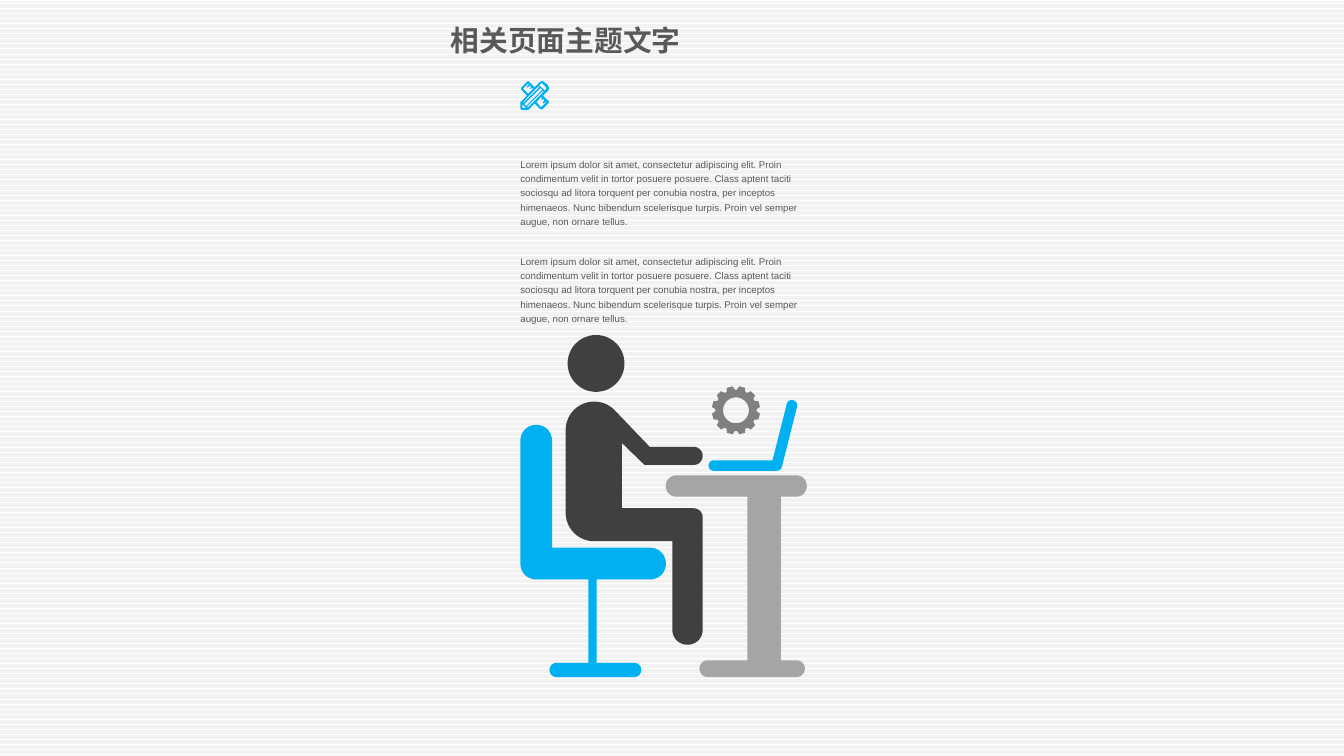
from math import acos, atan2, cos, hypot, pi, radians, remainder, sin, tan

from lxml.etree import SubElement
from pptx import Presentation
from pptx.dml.color import RGBColor
from pptx.enum.dml import MSO_PATTERN
from pptx.enum.shapes import MSO_SHAPE
from pptx.enum.text import MSO_ANCHOR, MSO_AUTO_SIZE, PP_ALIGN
from pptx.oxml.ns import qn
from pptx.util import Inches, Pt

WIDE, HIGH = 20.79, 11.69
BLUE, DARK, GREY, MID, INK = "00B0F0", "404040", "A5A5A5", "808080", "595959"
LOREM = (
    "Lorem ipsum dolor sit amet, consectetur adipiscing elit. Proin condimentum "
    "velit in tortor posuere posuere. Class aptent taciti sociosqu ad litora "
    "torquent per conubia nostra, per inceptos himenaeos. Nunc bibendum "
    "scelerisque turpis. Proin vel semper augue, non ornare tellus."
)

# Outlines are corners (x, y, radius) in inches from the top left of the scene.
CHAIR = [
    (0, 1.39, .24), (.49, 1.39, .24), (.49, 3.29, 0), (2.25, 3.29, .24),
    (2.25, 3.78, .24), (1.18, 3.78, 0), (1.18, 5.07, 0), (1.87, 5.07, .11),
    (1.87, 5.29, .11), (.45, 5.29, .11), (.45, 5.07, .11), (1.05, 5.07, 0),
    (1.05, 3.78, 0), (0, 3.78, .24),
]
BODY = [
    (.7, 1.03, .44), (1.33, 1.03, .44), (2, 1.73, 0), (2.82, 1.73, .14),
    (2.82, 2.01, .14), (1.92, 2.01, 0), (1.57, 1.67, 0), (1.57, 2.68, 0),
    (2.82, 2.68, .14), (2.82, 4.79, .23), (2.35, 4.79, .23), (2.35, 3.19, 0),
    (.7, 3.19, .44),
]
DESK = [
    (2.25, 2.17, .16), (4.43, 2.17, .16), (4.43, 2.5, .16), (4.03, 2.5, 0),
    (4.03, 5.03, 0), (4.4, 5.03, .13), (4.4, 5.29, .13), (2.77, 5.29, .13),
    (2.77, 5.03, .13), (3.51, 5.03, 0), (3.51, 2.5, 0), (2.25, 2.5, .16),
]
LAPTOP = [
    (2.91, 1.94, .08), (3.9, 1.94, 0), (4.14, .99, .08), (4.3, 1.03, .08),
    (4.03, 2.1, .08), (2.91, 2.1, .08),
]
TOOLS = [
    [(44, 32), (35, 23), (43, 15), (44, 13), (44, 10), (42, 6), (37, 2), (34, 0),
     (30, 2), (22, 10), (13, 1), (11, 1), (1, 11), (1, 13), (10, 23), (1, 32),
     (0, 33), (0, 43), (2, 45), (12, 45), (22, 35), (31, 44), (34, 44), (44, 34)],
    [(32, 4), (34, 4), (40, 10), (40, 12), (38, 15), (29, 7)],
    [(34, 14), (9, 39), (6, 36), (31, 11)],
    [(4, 12), (12, 4), (13, 6), (10, 9), (10, 10), (12, 10), (15, 7), (17, 10),
     (15, 11), (15, 12), (17, 12), (18, 11), (20, 12), (12, 20)],
    [(28, 8), (29, 10), (5, 34), (4, 33)],
    [(3, 42), (3, 36), (9, 42)],
    [(12, 41), (10, 40), (35, 15), (36, 17)],
    [(32, 41), (25, 33), (32, 25), (34, 26), (32, 28), (32, 29), (34, 29),
     (35, 28), (37, 30), (35, 33), (35, 35), (36, 35), (39, 32), (40, 33)],
]


def tint(code):
    """Return the colour for a hex string."""
    return RGBColor.from_string(code)


def put(item, **form):
    """Set each given attribute on the item."""
    for name, value in form.items():
        setattr(item, name, value)


def paint(shape, code):
    """Give the shape a plain fill with no line or shadow."""
    shape.fill.solid()
    shape.fill.fore_color.rgb = tint(code)
    shape.line.fill.background()
    shape.shadow.inherit = False


def bend(last, spot, then):
    """Return the points of one rounded corner."""
    x, y, r = spot
    if not r:
        return [(x, y)]
    ends = []
    for px, py, _ in (last, then):
        size = hypot(px - x, py - y)
        ends.append(((px - x) / size, (py - y) / size))
    (ax, ay), (bx, by) = ends
    half = acos(ax * bx + ay * by) / 2
    reach, span = r / tan(half), hypot(ax + bx, ay + by)
    cx = x + (ax + bx) / span * r / sin(half)
    cy = y + (ay + by) / span * r / sin(half)
    start = atan2(y + ay * reach - cy, x + ax * reach - cx)
    stop = atan2(y + by * reach - cy, x + bx * reach - cx)
    turn = remainder(stop - start, 2 * pi)
    return [(cx + r * cos(start + turn * i / 12), cy + r * sin(start + turn * i / 12))
            for i in range(13)]


def smooth(spots):
    """Return an outline with all its corners rounded."""
    return [point for i, spot in enumerate(spots)
            for point in bend(spots[i - 1], spot, spots[(i + 1) % len(spots)])]


def trace(slide, left, top, loops, code):
    """Draw closed loops as one filled outline."""
    loops = [[(Inches(left + x), Inches(top + y)) for x, y in loop] for loop in loops]
    pen = slide.shapes.build_freeform(*loops[0][0])
    for i, loop in enumerate(loops):
        if i:
            pen.move_to(*loop[0])
        pen.add_line_segments(loop[1:], close=True)
    paint(pen.convert_to_shape(), code)


def gear(slide, left, top, size):
    """Draw a cog with twelve teeth and a round hole."""
    mid = size / 2

    def ring(r, turns):
        return [(mid + r * cos(radians(a)), mid + r * sin(radians(a))) for a in turns]

    rim = []
    for turn in range(15, 375, 30):
        rim += ring(.32, [turn - 12]) + ring(mid, [turn - 7, turn + 7])
        rim += ring(.32, [turn + 12])
    trace(slide, left, top, [rim, ring(.2, range(0, 360, 6))], MID)


def scene(slide, left, top):
    """Draw the person working at the desk."""
    for spots, code in ((CHAIR, BLUE), (BODY, DARK), (DESK, GREY), (LAPTOP, BLUE)):
        trace(slide, left, top, [smooth(spots)], code)
    head = slide.shapes.add_shape(
        MSO_SHAPE.OVAL, Inches(left + .73), Inches(top), Inches(.88), Inches(.88))
    paint(head, DARK)
    gear(slide, left + 2.96, top + .79, .75)


def icon(slide, left, top):
    """Draw the crossed pencil and ruler."""
    loops = [[(x / 100, y / 100) for x, y in loop] for loop in TOOLS]
    trace(slide, left, top, loops, BLUE)


def copy(slide, left, top, width, height):
    """Place one block of body text."""
    box = slide.shapes.add_textbox(*map(Inches, (left, top, width, height)))
    put(box.text_frame, word_wrap=True, auto_size=MSO_AUTO_SIZE.SHAPE_TO_FIT_TEXT,
        margin_left=0, margin_right=0, margin_top=0, margin_bottom=0)
    para = box.text_frame.paragraphs[0]
    put(para, text=LOREM, line_spacing=Pt(16), space_before=Pt(9.2))
    put(para.runs[0].font, size=Pt(10.8), name="Arial")
    para.runs[0].font.color.rgb = tint(INK)


def head(slide, left, top, width, height):
    """Place and format the title."""
    title = slide.shapes.title
    put(title, left=Inches(left), top=Inches(top),
        width=Inches(width), height=Inches(height))
    put(title.text_frame, word_wrap=True, auto_size=MSO_AUTO_SIZE.NONE,
        vertical_anchor=MSO_ANCHOR.TOP)
    para = title.text_frame.paragraphs[0]
    put(para, text="相关页面主题文字", alignment=PP_ALIGN.LEFT, line_spacing=Pt(38.4))
    font = para.runs[0].font
    put(font, size=Pt(32), bold=True, name="Noto Sans CJK SC")
    font.color.rgb = tint(INK)
    SubElement(para.runs[0]._r.get_or_add_rPr(), qn("a:ea")).set("typeface", font.name)


def ground(slide, width, height):
    """Lay the striped sheet behind everything else."""
    sheet = slide.shapes.add_shape(
        MSO_SHAPE.RECTANGLE, 0, 0, Inches(width), Inches(height))
    paint(sheet, "FFFFFF")
    sheet.fill.patterned()
    sheet.fill.pattern = MSO_PATTERN.NARROW_HORIZONTAL
    sheet.fill.fore_color.rgb = tint("F2F2F2")
    sheet.fill.back_color.rgb = tint("FFFFFF")
    slide.shapes.title._element.addprevious(sheet._element)


def main():
    """Build the slide and save it."""
    deck = Presentation()
    put(deck, slide_width=Inches(WIDE), slide_height=Inches(HIGH))
    slide = deck.slides.add_slide(deck.slide_layouts[5])
    ground(slide, WIDE, HIGH)
    head(slide, 6.87, .3, 4.7, .64)
    scene(slide, 8.05, 5.18)
    icon(slide, 8.05, 1.25)
    for row in range(2):
        copy(slide, 8.05, 2.41 + 1.5 * row, 4.69, 1.12)
    deck.save("out.pptx")


if __name__ == "__main__":
    main()
